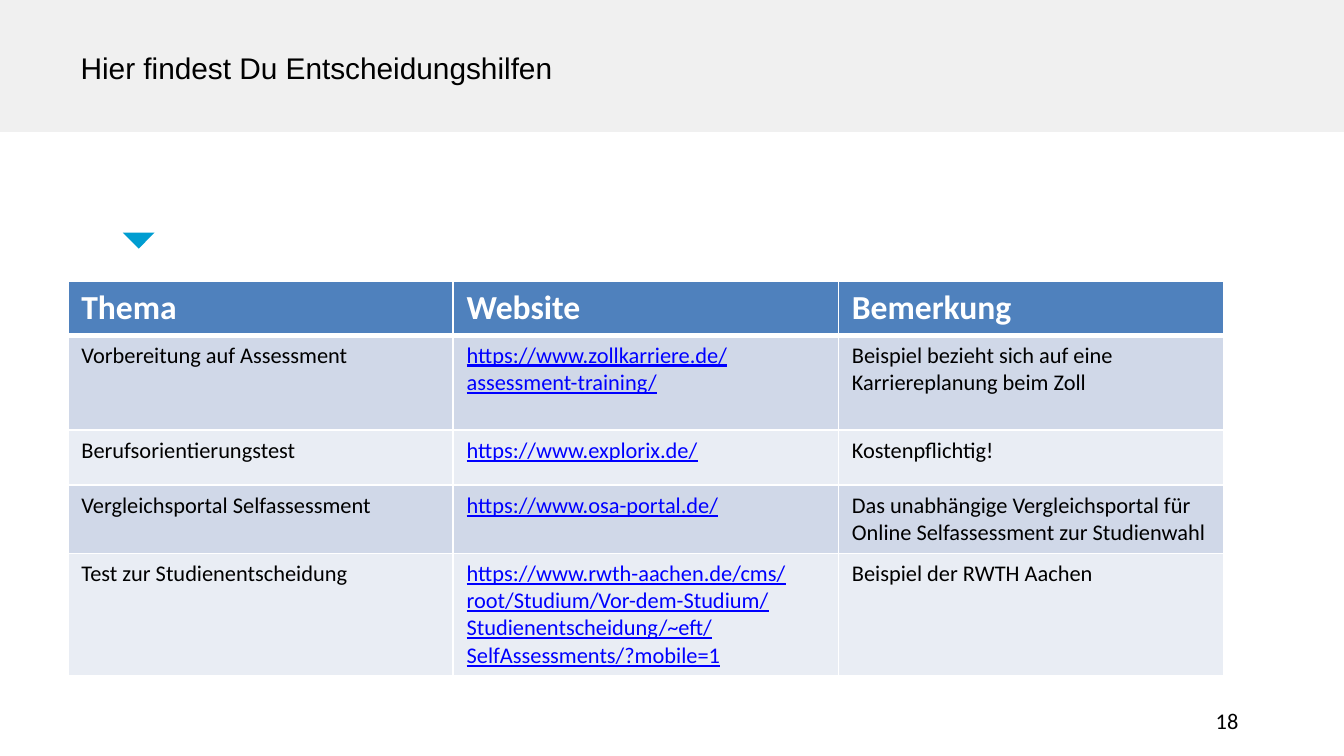
from lxml import etree
from pptx import Presentation
from pptx.dml.color import RGBColor
from pptx.enum import shapes, text
from pptx.oxml import ns
from pptx.util import Pt

COLORS = {
    "band": "F0F0F0",
    "marker": "009DD1",
    "header": "4F81BD",
    "odd": "D0D8E8",
    "even": "E9EDF4",
    "link": "0000FF",
    "black": "000000",
    "white": "FFFFFF",
}
HEADINGS = ["Thema", "Website", "Bemerkung"]
OFFERS = [
    ("Vorbereitung auf Assessment",
     "https://www.zollkarriere.de/assessment-training/",
     "Beispiel bezieht sich auf eine Karriereplanung beim Zoll"),
    ("Berufsorientierungstest",
     "https://www.explorix.de/",
     "Kostenpflichtig!"),
    ("Vergleichsportal Selfassessment",
     "https://www.osa-portal.de/",
     "Das unabhängige Vergleichsportal für Online Selfassessment zur Studienwahl"),
    ("Test zur Studienentscheidung",
     "https://www.rwth-aachen.de/cms/root/Studium/Vor-dem-Studium/"
     "Studienentscheidung/~eft/SelfAssessments/?mobile=1",
     "Beispiel der RWTH Aachen"),
]
ROW_HEIGHTS = [29, 51, 29.5, 36.5, 65.5]
COL_WIDTH = 206.4


def rgb(name):
    return RGBColor.from_string(COLORS[name])


def add_run(p, content, size, color="black", font="Calibri", bold=False, underline=False):
    r = p.add_run()
    r.text = content
    r.font.name = font
    r.font.size = Pt(size)
    r.font.bold = bold
    r.font.underline = underline
    r.font.color.rgb = rgb(color)


def add_filled(s, kind, left, top, width, height, color):
    sp = s.shapes.add_shape(kind, Pt(left), Pt(top), Pt(width), Pt(height))
    sp.shadow.inherit = False
    sp.fill.solid()
    sp.fill.fore_color.rgb = rgb(color)
    sp.line.fill.background()
    return sp


def set_title(s, content):
    sp = s.shapes.title
    sp.left, sp.top, sp.width, sp.height = Pt(36), Pt(13), Pt(466), Pt(46)
    tf = sp.text_frame
    tf.auto_size = text.MSO_AUTO_SIZE.NONE
    tf.vertical_anchor = text.MSO_ANCHOR.MIDDLE
    p = tf.paragraphs[0]
    p.alignment = text.PP_ALIGN.LEFT
    add_run(p, content, 16, font="Arial")


def add_page_number(s, number):
    tf = s.shapes.add_textbox(Pt(508.5), Pt(375), Pt(162), Pt(21.6)).text_frame
    tf.word_wrap = True
    tf.vertical_anchor = text.MSO_ANCHOR.MIDDLE
    p = tf.paragraphs[0]
    p.alignment = text.PP_ALIGN.RIGHT
    add_run(p, number, 12)


def set_borders(cell, widths):
    tc_pr = cell._tc.get_or_add_tcPr()
    for side, width in widths.items():
        ln = etree.SubElement(tc_pr, ns.qn(f"a:ln{side}"), w=str(Pt(width)))
        fill = etree.SubElement(ln, ns.qn("a:solidFill"))
        etree.SubElement(fill, ns.qn("a:srgbClr"), val=COLORS["white"])


def fill_cell(cell, content, row, col):
    header = row == 0
    p = cell.text_frame.paragraphs[0]
    if header:
        add_run(p, content, 18, "white", bold=True)
    elif col == 1:
        add_run(p, content, 12, "link", underline=True)
    else:
        add_run(p, content, 12)
    set_borders(cell, {"L": 1, "R": 1, "T": 3 if row == 1 else 1, "B": 3 if header else 1})
    cell.fill.solid()
    cell.fill.fore_color.rgb = rgb("header" if header else "odd" if row % 2 else "even")


def add_offer_table(s):
    rows = [HEADINGS, *OFFERS]
    frame = s.shapes.add_table(len(rows), len(HEADINGS), Pt(36.4), Pt(150.5),
                               Pt(COL_WIDTH * len(HEADINGS)), Pt(sum(ROW_HEIGHTS)))
    table = frame.table
    for column in table.columns:
        column.width = Pt(COL_WIDTH)
    for i, (height, contents) in enumerate(zip(ROW_HEIGHTS, rows)):
        table.rows[i].height = Pt(height)
        for j, content in enumerate(contents):
            fill_cell(table.cell(i, j), content, i, j)


def main():
    prs = Presentation()
    prs.slide_width, prs.slide_height = Pt(720), Pt(405)
    s = prs.slides.add_slide(prs.slide_layouts[5])
    band = add_filled(s, shapes.MSO_SHAPE.RECTANGLE, 0, 0, 720, 70.6, "band")
    s.shapes.title._element.addprevious(band._element)
    marker = add_filled(s, shapes.MSO_SHAPE.ISOSCELES_TRIANGLE, 65.8, 124.6, 17, 8.6, "marker")
    marker.rotation = 180
    set_title(s, "Hier findest Du Entscheidungshilfen")
    add_page_number(s, "18")
    add_offer_table(s)
    prs.save("out.pptx")


if __name__ == "__main__":
    main()
